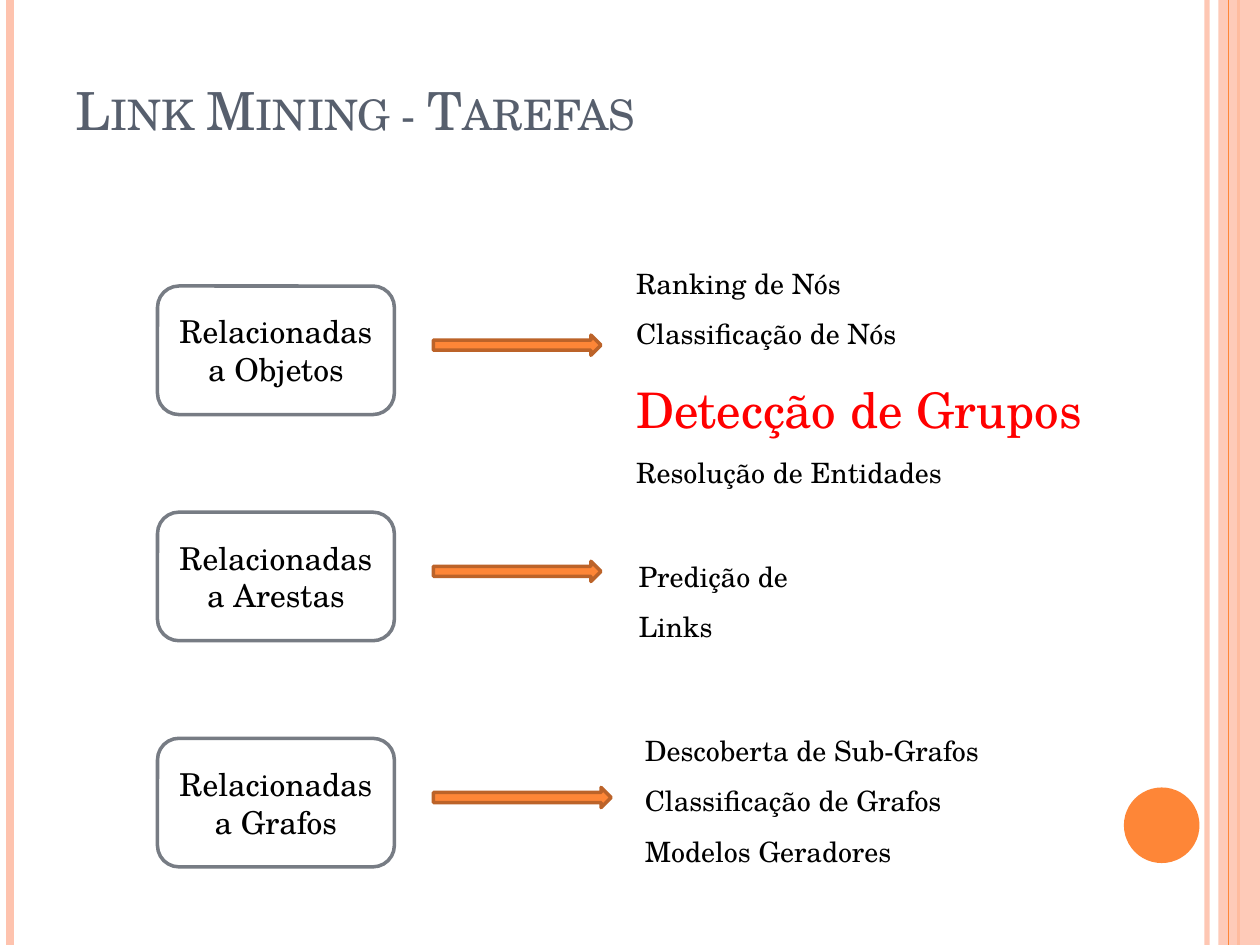
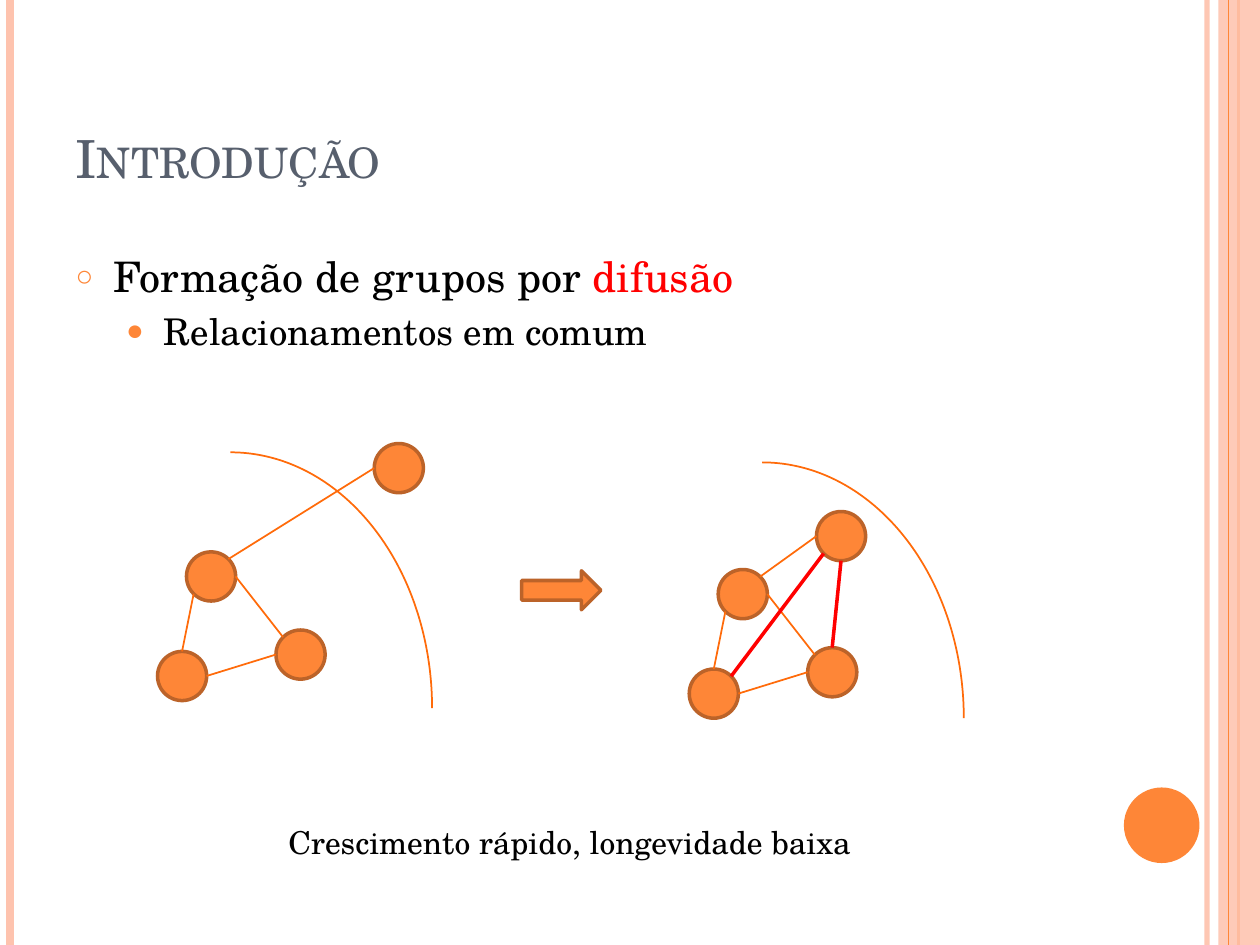
import math

import pptx
import pptx.util
import pptx.dml.color
import pptx.enum.shapes
import pptx.enum.text
import pptx.oxml
import pptx.oxml.ns

COLUMNS, ROWS = 100, 75
WIDTH, HEIGHT = pptx.util.Inches(10), pptx.util.Inches(7.5)
FONT = "TeX Gyre Schola"
ORANGE, RUST, EDGE, PEACH = "FE8637", "BC6329", "FF6B0A", "FEC3AE"
SLATE, GREY, BLACK, RED, WHITE = "575F6D", "777C84", "000000", "FF0000", "FFFFFF"

SHAPE = pptx.enum.shapes.MSO_SHAPE
ALIGN = pptx.enum.text.PP_ALIGN
ANCHOR = pptx.enum.text.MSO_ANCHOR
NO_FIT = pptx.enum.text.MSO_AUTO_SIZE.NONE

NODE_SIZE = 3.9
NODES = {"newcomer": (29.7, 35.2), "top": (14.8, 43.8),
         "right": (21.9, 50), "left": (12.5, 51.7)}
ANGLES = {"E": 0, "SE": 45, "S": 90, "SW": 135, "W": 180, "NW": 225, "N": 270, "NE": 315}
FRIENDSHIPS = [("left", "N", "top", "SW"), ("top", "E", "right", "NW"),
               ("left", "E", "right", "W"), ("top", "NE", "newcomer", "W")]
NEW_FRIENDSHIPS = [("right", "N", "newcomer", "S"), ("left", "NE", "newcomer", "SW")]


def across(columns):
    return round(WIDTH * columns / COLUMNS)


def down(rows):
    return round(HEIGHT * rows / ROWS)


def area(column, row, columns, rows):
    return across(column), down(row), across(columns), down(rows)


def color(hex_code):
    return pptx.dml.color.RGBColor.from_string(hex_code)


def apply(target, formats):
    for name, value in formats.items():
        setattr(target, name, value)


def add_xml(parent, tag, **attributes):
    child = pptx.oxml.parse_xml(f"<a:{tag} {pptx.oxml.ns.nsdecls('a')}/>")
    for name, value in attributes.items():
        child.set(name, str(value))
    parent.append(child)
    return child


def set_opacity(shape, percent):
    add_xml(shape.element.xpath(".//a:srgbClr")[0], "alpha", val=percent * 1000)


def set_outline(shape, hex_code, points):
    shape.line.color.rgb = color(hex_code)
    shape.line.width = pptx.util.Pt(points)


def add_figure(page, kind, place, fill=None, outline=None, points=2):
    figure = page.shapes.add_shape(kind, *area(*place))
    figure.shadow.inherit = False
    if fill:
        figure.fill.solid()
        figure.fill.fore_color.rgb = color(fill)
    else:
        figure.fill.background()
    if outline:
        set_outline(figure, outline, points)
    else:
        figure.line.fill.background()
    return figure


def add_line(page, start, end, hex_code, points):
    line = page.shapes.add_connector(
        pptx.enum.shapes.MSO_CONNECTOR.STRAIGHT,
        across(start[0]), down(start[1]), across(end[0]), down(end[1]))
    set_outline(line, hex_code, points)
    add_xml(line.element.spPr, "effectLst")
    return line


def add_span(para, text, size, hex_code=BLACK):
    span = para.add_run()
    span.text = text
    apply(span.font, {"name": FONT, "size": pptx.util.Pt(size), "bold": False})
    span.font.color.rgb = color(hex_code)
    return span


def add_lines(page, place, lines, size=16, spacing=1.5):
    """Add a text box; a line is a text or a (text, size, colour) tuple."""
    box = page.shapes.add_textbox(*area(*place))
    box.text_frame.word_wrap = True
    for index, line in enumerate(lines):
        para = box.text_frame.add_paragraph() if index else box.text_frame.paragraphs[0]
        para.line_spacing = spacing
        text, *style = (line, size) if isinstance(line, str) else line
        add_span(para, text, *style)


def move_to(placeholder, place):
    apply(placeholder, dict(zip(("left", "top", "width", "height"), area(*place))))


def set_title(page, text, row):
    title = page.shapes.title
    move_to(title, (5, row, 81.7, 12.5))
    apply(title.text_frame, {"vertical_anchor": ANCHOR.BOTTOM, "auto_size": NO_FIT})
    para = title.text_frame.paragraphs[0]
    para.alignment = ALIGN.LEFT
    span = add_span(para, text, 30, SLATE)
    span.font._element.set("cap", "small")


def set_bullet(para, char, percent, left, before):
    para.space_before = pptx.util.Pt(before)
    properties = para._p.get_or_add_pPr()
    properties.set("marL", str(across(left)))
    properties.set("indent", str(-across(3)))
    add_xml(add_xml(properties, "buClr"), "srgbClr", val=ORANGE)
    add_xml(properties, "buSzPct", val=percent * 1000)
    add_xml(properties, "buChar", char=char)


def decorate_master(deck, page):
    """Draw the side bands on an empty page and move them to the master."""
    before = list(page.shapes)

    def rule(column, hex_code, points):
        return add_line(page, (column, 0), (column, ROWS), hex_code, points)

    set_opacity(rule(95.8, PEACH, 3), 93)
    rule(0.8, PEACH, 4.5)
    rule(98.3, ORANGE, 1.5)
    set_opacity(add_figure(page, SHAPE.RECTANGLE, (96.7, 0, 3.3, ROWS), PEACH), 87)
    rule(97.5, ORANGE, 0.75)
    add_figure(page, SHAPE.OVAL, (89.2, 62.5, 6, 6), ORANGE)
    for shape in list(page.shapes)[len(before):]:
        deck.slide_master.shapes.element.append(shape.element)


def add_arrow(page, place):
    add_figure(page, SHAPE.RIGHT_ARROW, place, ORANGE, RUST)


def add_task(page, index, text, arrow_length):
    row = 22.7 + 17.95 * index
    card = add_figure(page, SHAPE.ROUNDED_RECTANGLE, (12.5, row, 18.8, 10.2), WHITE, GREY)
    apply(card.text_frame, {"word_wrap": True, "vertical_anchor": ANCHOR.MIDDLE})
    para = card.text_frame.paragraphs[0]
    para.alignment = ALIGN.CENTER
    add_span(para, text, 18)
    add_arrow(page, (34.4, row + 3.9, arrow_length, 1.6))


def fill_tasks(page):
    set_title(page, "Link Mining - Tarefas", -0.8)
    tasks = [("Objetos", 13.3), ("Arestas", 13.3), ("Grafos", 14.1)]
    for index, (target, arrow_length) in enumerate(tasks):
        add_task(page, index, f"Relacionadas a {target}", arrow_length)
    add_lines(page, (49.5, 19.3, 38.5, 20.2),
              ["Ranking de Nós", "Classificação de Nós",
               ("Detecção de Grupos", 28, RED), "Resolução de Entidades"])
    add_lines(page, (49.7, 42.6, 18, 5), ["Predição de Links"])
    add_lines(page, (50.2, 56.4, 30, 13.1),
              ["Descoberta de Sub-Grafos", "Classificação de Grafos", "Modelos Geradores"])


def rim_point(corner, side):
    angle, radius = math.radians(ANGLES[side]), NODE_SIZE / 2
    return (corner[0] + radius * (1 + math.cos(angle)),
            corner[1] + radius * (1 + math.sin(angle)))


def add_edges(page, nodes, edges, hex_code, points):
    for first, first_side, second, second_side in edges:
        add_line(page, rim_point(nodes[first], first_side),
                 rim_point(nodes[second], second_side), hex_code, points)


def add_network(page, nodes, boundary):
    add_figure(page, SHAPE.ARC, (*boundary, 32, 40.6), None, EDGE, 1)
    for corner in nodes.values():
        add_figure(page, SHAPE.OVAL, (*corner, NODE_SIZE, NODE_SIZE), ORANGE, RUST)
    add_edges(page, nodes, FRIENDSHIPS, EDGE, 1)


def fill_introduction(page):
    set_title(page, "Introdução", 3)
    body = page.placeholders[1]
    move_to(body, (5, 19.4, 81.7, 53.3))
    body.text_frame.auto_size = NO_FIT
    topic = body.text_frame.paragraphs[0]
    set_bullet(topic, "○", 70, 3, 6)
    add_span(topic, "Formação de grupos por ", 24)
    add_span(topic, "difusão", 24, RED)
    detail = body.text_frame.add_paragraph()
    detail.level = 1
    set_bullet(detail, "●", 80, 7, 4.2)
    add_span(detail, "Relacionamentos em comum", 21)

    add_network(page, NODES, (2.3, 35.9))
    joined = {name: (column + 42.2, row + 1.4) for name, (column, row) in NODES.items()}
    joined["newcomer"] = (64.8, 40.6)
    add_network(page, joined, (44.5, 36.7))
    add_edges(page, joined, NEW_FRIENDSHIPS, RED, 2)
    add_arrow(page, (41.4, 45.3, 6.3, 3.1))
    add_lines(page, (21.9, 64.8, 48, 4), ["Crescimento rápido, longevidade baixa"], 18, 1)


def main():
    deck = pptx.Presentation()
    apply(deck, {"slide_width": WIDTH, "slide_height": HEIGHT})
    tasks = deck.slides.add_slide(deck.slide_layouts.get_by_name("Title Only"))
    decorate_master(deck, tasks)
    fill_tasks(tasks)
    fill_introduction(deck.slides.add_slide(deck.slide_layouts.get_by_name("Title and Content")))
    deck.save("out.pptx")


if __name__ == "__main__":
    main()
